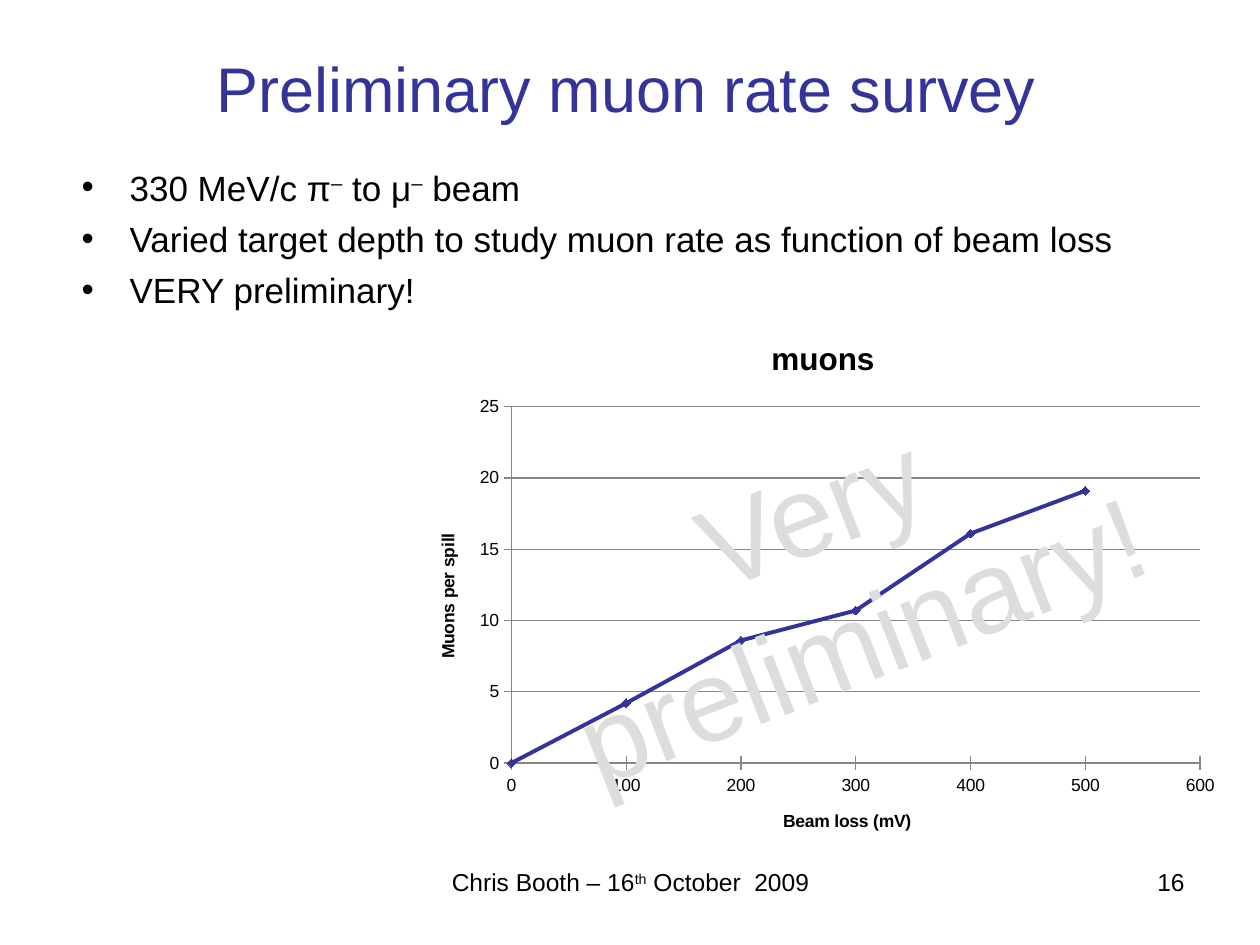
from dataclasses import dataclass

from lxml import etree
from pptx import Presentation
from pptx import util as u
from pptx.chart.data import XyChartData
from pptx.dml.color import RGBColor
from pptx.enum import chart as ch
from pptx.enum import text
from pptx.oxml import parse_xml
from pptx.oxml.ns import nsdecls, qn

PX = 914400 / 126


@dataclass(frozen=True)
class Theme:
    font: str = "Arial"
    ink: str = "000000"
    accent: str = "333399"
    pale: str = "DDDDDD"
    grid: str = "868686"
    title: int = 36
    body: int = 20
    footer: int = 14
    stamp: int = 66
    chart_title: int = 18
    axis: int = 10


T = Theme()


def place(sp, x, y, w, h):
    sp.left, sp.top, sp.width, sp.height = (u.Emu(round(v * PX)) for v in (x, y, w, h))


def write(tf, lines, size, color, align):
    """Fill a frame with lines; text between carets is superscript."""
    tf.word_wrap = True
    for i, line in enumerate(lines):
        p = tf.paragraphs[0] if i == 0 else tf.add_paragraph()
        p.alignment = align
        for j, part in enumerate(line.split("^")):
            r = p.add_run()
            r.text = part
            r.font.name, r.font.size = T.font, u.Pt(size)
            r.font.color.rgb = RGBColor.from_string(color)
            if j % 2:
                r.font._element.set("baseline", "30000")


prs = Presentation()
prs.slide_width, prs.slide_height = u.Inches(10), u.Inches(7.5)
s = prs.slides.add_slide(prs.slide_layouts[1])

# Title
title = s.shapes.title
place(title, 59, 29, 1134, 117)
title.text_frame.vertical_anchor = text.MSO_ANCHOR.MIDDLE
write(title.text_frame, ["Preliminary muon rate survey"], T.title, T.accent, text.PP_ALIGN.CENTER)

# Bullets
body = s.placeholders[1]
place(body, 69, 168, 1092, 364)
body.text_frame.auto_size = text.MSO_AUTO_SIZE.NONE
write(body.text_frame,
      ["330 MeV/c π^–^ to μ^–^ beam",
       "Varied target depth to study muon rate as function of beam loss",
       "VERY preliminary!"],
      T.body, T.ink, text.PP_ALIGN.LEFT)
indent = round(48 * PX)
for p in body.text_frame.paragraphs:
    p.line_spacing, p.space_before, p.space_after = 0.8, u.Pt(4), u.Pt(6)
    pPr = p._p.get_or_add_pPr()
    pPr.set("marL", str(indent))
    pPr.set("indent", str(-indent))
    etree.SubElement(pPr, qn("a:buChar")).set("char", "•")

# Chart
data = XyChartData()
series = data.add_series("muons")
for loss, rate in zip(range(0, 600, 100), (0, 4.2, 8.6, 10.7, 16.1, 19.1)):
    series.add_data_point(loss, rate)
frame = s.shapes.add_chart(ch.XL_CHART_TYPE.XY_SCATTER_LINES, 0, 0, 1, 1, data)
place(frame, 413, 315, 820, 540)
chart = frame.chart
chart.has_legend = False
chart.font.name, chart.font.size = T.font, u.Pt(T.axis)
chart.font.color.rgb = RGBColor.from_string(T.ink)
chart.has_title = True
chart.plots[0].vary_by_categories = False

for axis, name, top, step in ((chart.category_axis, "Beam loss (mV)", 600, 100),
                              (chart.value_axis, "Muons per spill", 25, 5)):
    axis.minimum_scale, axis.maximum_scale, axis.major_unit = 0, top, step
    axis.major_tick_mark = ch.XL_TICK_MARK.CROSS
    axis.has_major_gridlines = axis is chart.value_axis or name == "Muons per spill"
    axis.tick_labels.number_format = "General"
    axis.tick_labels.number_format_is_linked = False
    axis.format.line.color.rgb = RGBColor.from_string(T.grid)
    axis.axis_title.text_frame.text = name
grid_line = chart.value_axis.major_gridlines.format.line
grid_line.color.rgb = RGBColor.from_string(T.grid)
grid_line.width = u.Pt(0.75)

chart.chart_title.text_frame.text = "muons"
chart.chart_title.include_in_layout = False
for heading, size in ((chart.chart_title, T.chart_title),
                      (chart.category_axis.axis_title, T.axis),
                      (chart.value_axis.axis_title, T.axis)):
    font = heading.text_frame.paragraphs[0].runs[0].font
    font.name, font.size, font.bold = T.font, u.Pt(size), True
    font.color.rgb = RGBColor.from_string(T.ink)

line = chart.plots[0].series[0]
line.smooth = False
line.format.line.width = u.Pt(2.25)
line.marker.style, line.marker.size = ch.XL_MARKER_STYLE.DIAMOND, 5
line.marker.format.fill.solid()
for color in (line.format.line.color, line.marker.format.fill.fore_color,
              line.marker.format.line.color):
    color.rgb = RGBColor.from_string(T.accent)

plot_area = chart._chartSpace.find(".//" + qn("c:plotArea"))
for old in plot_area.findall(qn("c:layout")):
    plot_area.remove(old)
bounds = "".join(f'<c:{tag} val="{val}"/>' for tag, val in (
    ("layoutTarget", "inner"), ("xMode", "edge"), ("yMode", "edge"),
    ("x", 0.12), ("y", 0.17), ("w", 0.84), ("h", 0.66)))
plot_area.insert(0, parse_xml(
    f'<c:layout {nsdecls("c")}><c:manualLayout>{bounds}</c:manualLayout></c:layout>'))

# Footer, slide number and slanted caution
for lines, box, size, color, align, angle in (
        (["16"], (903, 861, 294, 66), T.footer, T.ink, text.PP_ALIGN.RIGHT, 0),
        (["Chris Booth – 16^th^ October  2009"], (431, 861, 399, 66),
         T.footer, T.ink, text.PP_ALIGN.CENTER, 0),
        (["Very", "preliminary!"], (501, 427, 669, 292),
         T.stamp, T.pale, text.PP_ALIGN.CENTER, 338.6)):
    sp = s.shapes.add_textbox(0, 0, 1, 1)
    place(sp, *box)
    sp.rotation = angle
    write(sp.text_frame, lines, size, color, align)

prs.save("out.pptx")
